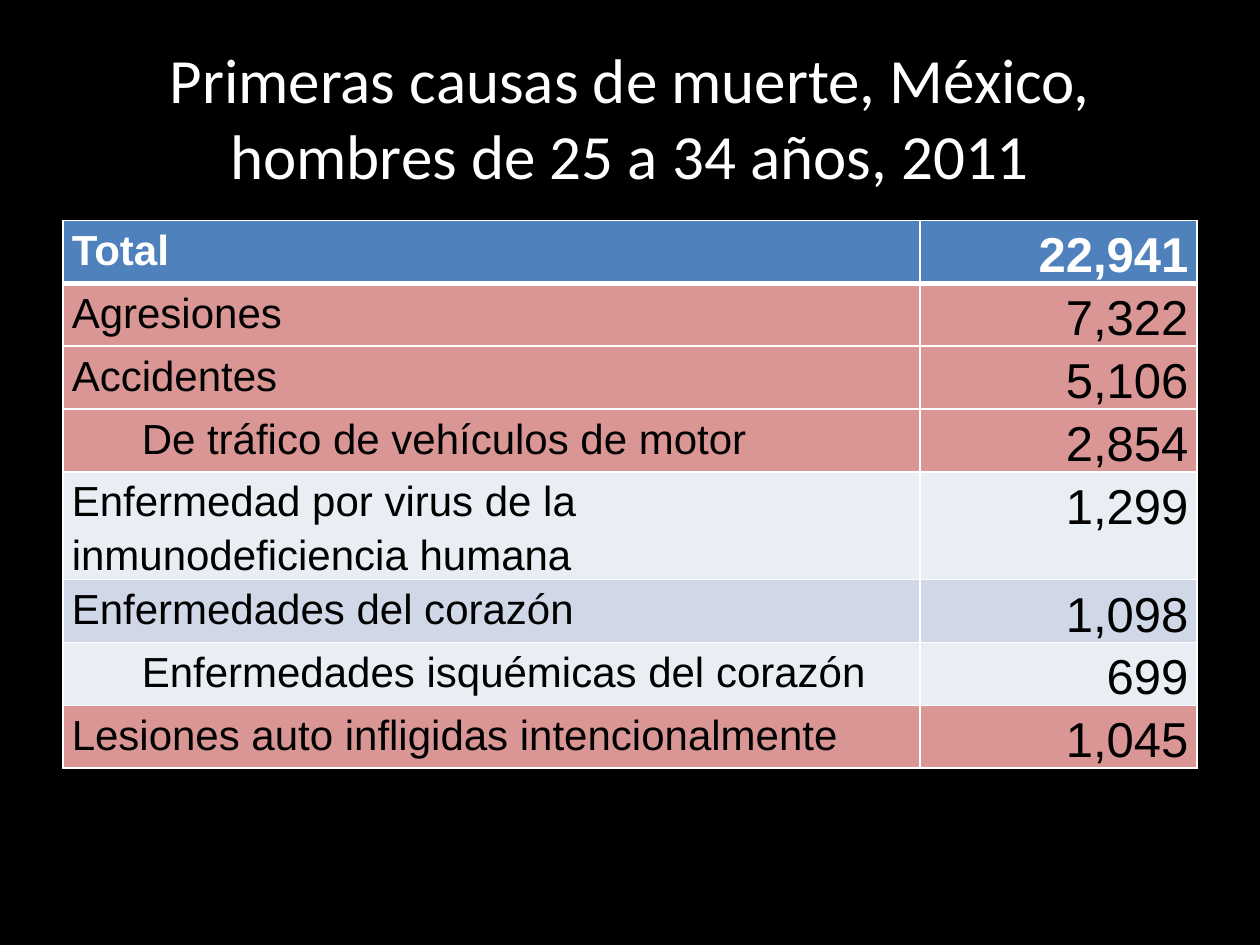
from lxml import etree
from pptx import Presentation
from pptx.dml.color import RGBColor
from pptx.enum.text import MSO_ANCHOR, PP_ALIGN
from pptx.oxml.ns import qn
from pptx.util import Pt

LEFT, CENTER, RIGHT = PP_ALIGN.LEFT, PP_ALIGN.CENTER, PP_ALIGN.RIGHT
MIDDLE = MSO_ANCHOR.MIDDLE

TITLE = "Primeras causas de muerte, México, hombres de 25 a 34 años, 2011"
# Cause, deaths, fill name, indent level
CAUSES = [
    ("Total", "22,941", "header", 0),
    ("Agresiones", "7,322", "violent", 0),
    ("Accidentes", "5,106", "violent", 0),
    ("De tráfico de vehículos de motor", "2,854", "violent", 1),
    ("Enfermedad por virus de la inmunodeficiencia humana", "1,299", "light", 0),
    ("Enfermedades del corazón", "1,098", "band", 0),
    ("Enfermedades isquémicas del corazón", "699", "light", 1),
    ("Lesiones auto infligidas intencionalmente", "1,045", "violent", 0),
]
COLORS = {
    "background": "000000", "white": "FFFFFF", "black": "000000",
    "header": "4F81BD", "violent": "D99694", "light": "E9EDF4", "band": "D0D8E8",
}
COLUMN_WIDTHS = (489.6, 158.4)
ROW_HEIGHT = 34.56
CELL_MARGIN = 5.04
INDENT = 40


def color(name):
    return RGBColor.from_string(COLORS[name])


def format_font(font, color_name, **values):
    font.color.rgb = color(color_name)
    for name, value in values.items():
        setattr(font, name, value)


def set_borders(cell, widths):
    """Draw white borders; the schema wants them ahead of the cell fill."""
    properties = cell._tc.get_or_add_tcPr()
    for position, (side, width) in enumerate(widths.items()):
        line = etree.Element(qn(f"a:ln{side}"), w=str(Pt(width)))
        fill = etree.SubElement(line, qn("a:solidFill"))
        etree.SubElement(fill, qn("a:srgbClr"), val=COLORS["white"])
        properties.insert(position, line)


def add_title(slide):
    title = slide.shapes.title
    title.left, title.top, title.width, title.height = Pt(36), Pt(21.6), Pt(648), Pt(90)
    frame = title.text_frame
    frame.text = TITLE
    frame.word_wrap = True
    frame.vertical_anchor = MIDDLE
    paragraph = frame.paragraphs[0]
    paragraph.alignment = CENTER
    format_font(paragraph.runs[0].font, "white", name="Calibri", size=Pt(36))


def fill_cell(cell, text, alignment, size, fill_name, indent, is_header, below_header):
    margins = {"margin_left": CELL_MARGIN + indent, "margin_right": CELL_MARGIN,
               "margin_top": 0, "margin_bottom": 0}
    for name, value in margins.items():
        setattr(cell, name, Pt(value))
    cell.fill.solid()
    cell.fill.fore_color.rgb = color(fill_name)
    set_borders(cell, {"L": 1, "R": 1, "T": 3 if below_header else 1,
                       "B": 3 if is_header else 1})
    cell.text = text
    paragraph = cell.text_frame.paragraphs[0]
    paragraph.alignment = alignment
    paragraph.line_spacing = 1.15
    format_font(paragraph.runs[0].font, "white" if is_header else "black",
                name="Arial", size=Pt(size), bold=is_header)


def add_causes_table(slide):
    table = slide.shapes.add_table(
        len(CAUSES), len(COLUMN_WIDTHS), Pt(36), Pt(126),
        Pt(sum(COLUMN_WIDTHS)), Pt(ROW_HEIGHT * len(CAUSES))).table
    for column, width in zip(table.columns, COLUMN_WIDTHS):
        column.width = Pt(width)
    for index, (cause, deaths, fill_name, level) in enumerate(CAUSES):
        table.rows[index].height = Pt(ROW_HEIGHT)
        row_format = (index == 0, index == 1)
        fill_cell(table.cell(index, 0), cause, LEFT, 24, fill_name, level * INDENT, *row_format)
        fill_cell(table.cell(index, 1), deaths, RIGHT, 28, fill_name, 0, *row_format)


def main():
    presentation = Presentation()
    presentation.slide_width, presentation.slide_height = Pt(720), Pt(540)
    slide = presentation.slides.add_slide(presentation.slide_layouts.get_by_name("Title Only"))
    slide.background.fill.solid()
    slide.background.fill.fore_color.rgb = color("background")
    add_title(slide)
    add_causes_table(slide)
    presentation.save("out.pptx")


if __name__ == "__main__":
    main()
